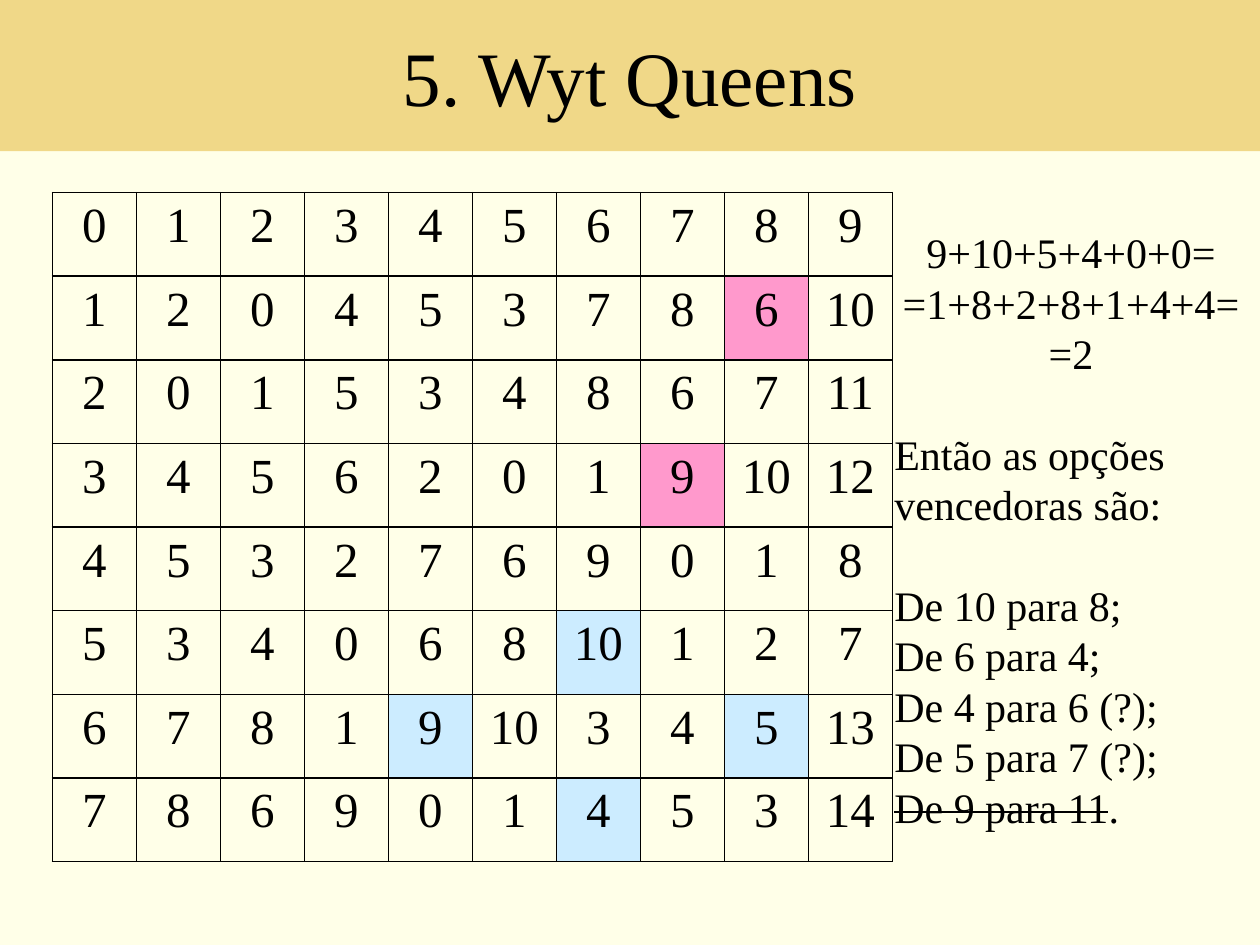
import pptx
import pptx.dml.color
import pptx.enum.text
import pptx.oxml
import pptx.oxml.ns
import pptx.util

Pt = pptx.util.Pt
ALIGN = pptx.enum.text.PP_ALIGN
ANCHOR = pptx.enum.text.MSO_ANCHOR
INK, CREAM, SAND = "000000", "FFFFE8", "F0D888"
PINK, SKY = "FF99CC", "CCECFF"

GRID = [
    [0, 1, 2, 3, 4, 5, 6, 7, 8, 9],
    [1, 2, 0, 4, 5, 3, 7, 8, 6, 10],
    [2, 0, 1, 5, 3, 4, 8, 6, 7, 11],
    [3, 4, 5, 6, 2, 0, 1, 9, 10, 12],
    [4, 5, 3, 2, 7, 6, 9, 0, 1, 8],
    [5, 3, 4, 0, 6, 8, 10, 1, 2, 7],
    [6, 7, 8, 1, 9, 10, 3, 4, 5, 13],
    [7, 8, 6, 9, 0, 1, 4, 5, 3, 14],
]
# Marked cells by (row, column)
MARKS = {(1, 8): PINK, (3, 7): PINK,
         (5, 6): SKY, (6, 4): SKY, (6, 8): SKY, (7, 6): SKY}

# Each line: alignment, blank lines before, runs of (text, struck)
NOTES = [
    (ALIGN.CENTER, 0, [("9+10+5+4+0+0=", False)]),
    (ALIGN.CENTER, 0, [("=1+8+2+8+1+4+4=", False)]),
    (ALIGN.CENTER, 0, [("=2", False)]),
    (ALIGN.LEFT, 1, [("Então as opções vencedoras são:", False)]),
    (ALIGN.LEFT, 1, [("De 10 para 8;", False)]),
    (ALIGN.LEFT, 0, [("De 6 para 4;", False)]),
    (ALIGN.LEFT, 0, [("De 4 para 6 (?);", False)]),
    (ALIGN.LEFT, 0, [("De 5 para 7 (?);", False)]),
    (ALIGN.LEFT, 0, [("De 9 para 11", True), (".", False)]),
]


def color(code):
    return pptx.dml.color.RGBColor.from_string(code)


class Page:
    font = "Times New Roman"

    def __init__(self, slide):
        self.slide = slide
        self.paint(slide.background.fill, CREAM)

    def paint(self, fill, code):
        fill.solid()
        fill.fore_color.rgb = color(code)

    def add(self, para, text, size, struck=False):
        run = para.add_run()
        run.text = text
        run.font.name = self.font
        run.font.size = Pt(size)
        run.font.color.rgb = color(INK)
        if struck:
            run._r.get_or_add_rPr().set("strike", "sngStrike")

    def place(self, shape, left, top, width, height):
        shape.left, shape.top = Pt(left), Pt(top)
        shape.width, shape.height = Pt(width), Pt(height)

    def title(self, text, *box):
        shape = self.slide.shapes.title
        self.place(shape, *box)
        self.paint(shape.fill, SAND)
        shape.text_frame.vertical_anchor = ANCHOR.MIDDLE
        para = shape.text_frame.paragraphs[0]
        para.alignment = ALIGN.CENTER
        self.add(para, text, 44)

    def border(self, cell):
        props = cell._tc.get_or_add_tcPr()
        space = pptx.oxml.ns.nsdecls("a")
        for spot, side in enumerate(("lnL", "lnR", "lnT", "lnB")):
            props.insert(spot, pptx.oxml.parse_xml(
                f'<a:{side} {space} w="12700"><a:solidFill>'
                f'<a:srgbClr val="{INK}"/></a:solidFill></a:{side}>'))

    def table(self, grid, marks, left, top, width, height):
        rows, cols = len(grid), len(grid[0])
        table = self.slide.shapes.add_table(
            rows, cols, Pt(left), Pt(top), Pt(width), Pt(height)).table
        table.first_row = table.horz_banding = False
        for r, row in enumerate(grid):
            for c, value in enumerate(row):
                cell = table.cell(r, c)
                if (r, c) in marks:
                    self.paint(cell.fill, marks[r, c])
                else:
                    cell.fill.background()
                self.border(cell)
                para = cell.text_frame.paragraphs[0]
                para.alignment = ALIGN.CENTER
                self.add(para, str(value), 28)

    def notes(self, lines, *box):
        pitch = 28.8
        frame = self.slide.shapes.add_textbox(*map(Pt, box)).text_frame
        frame.word_wrap = True
        for i, (align, gap, runs) in enumerate(lines):
            para = frame.add_paragraph() if i else frame.paragraphs[0]
            para.alignment = align
            para.line_spacing = Pt(pitch)
            if gap:
                para.space_before = Pt(gap * pitch)
            for text, struck in runs:
                self.add(para, text, 24, struck)


def main():
    deck = pptx.Presentation()
    deck.slide_width, deck.slide_height = Pt(720), Pt(540)
    page = Page(deck.slides.add_slide(deck.slide_layouts[5]))
    # Heading band
    page.title("5. Wyt Queens", 0, 0, 720, 86.4)
    # Board of values
    page.table(GRID, MARKS, 30, 110, 480, 382.4)
    # Sum and winning moves
    page.notes(NOTES, 504, 126, 216, 356.4)
    deck.save("out.pptx")


if __name__ == "__main__":
    main()
